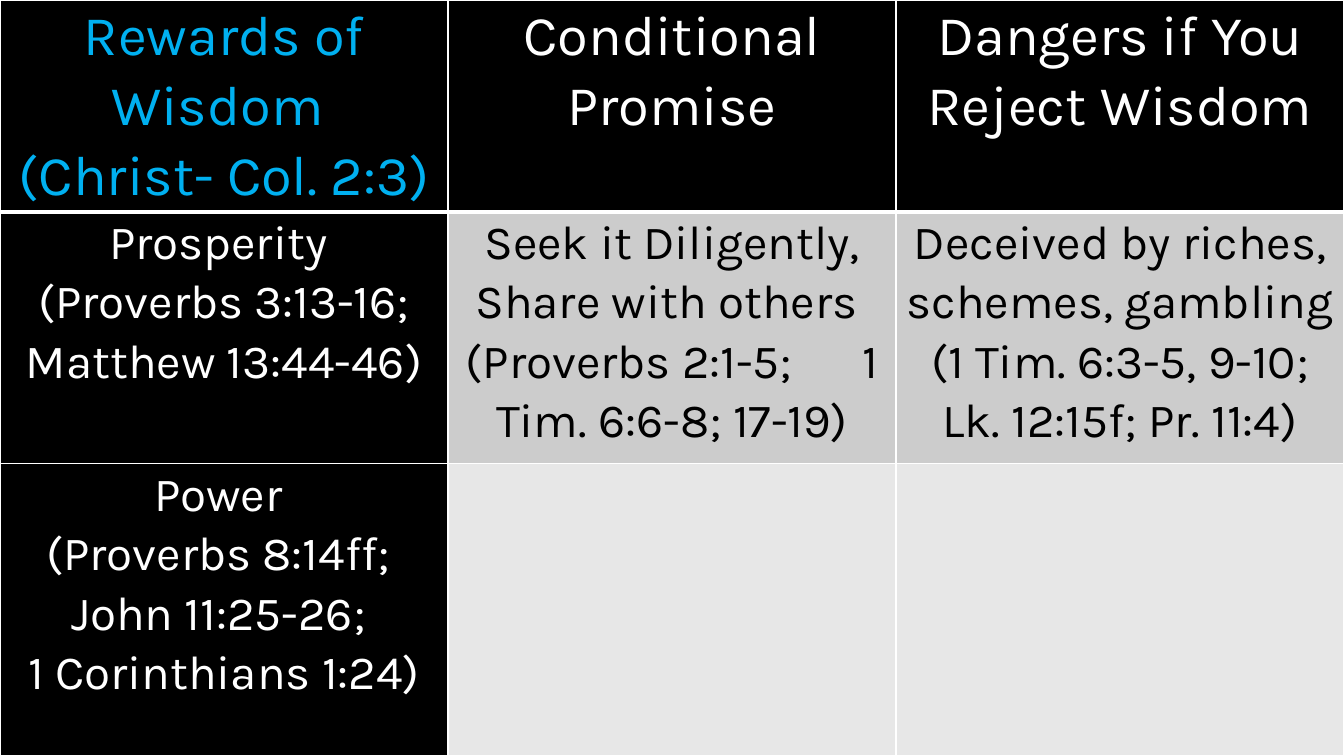
from lxml import etree
from pptx import Presentation
from pptx.dml.color import RGBColor
from pptx.enum import text
from pptx.oxml import ns
from pptx.util import Inches, Pt

BLACK = RGBColor(0x00, 0x00, 0x00)
WHITE = RGBColor(0xFF, 0xFF, 0xFF)
BLUE = RGBColor(0x00, 0xB0, 0xF0)
GREY = RGBColor(0xCC, 0xCC, 0xCC)
PALE = RGBColor(0xE7, 0xE7, 0xE7)

WIDTH, HEIGHT = Inches(13.33), Inches(7.5)
ROW_HEIGHTS = [2.1, 2.5, 2.9]
ROW_FILLS = [BLACK, GREY, PALE]
HEADER_SIZE, BODY_SIZE = 40, 34
WIDE_GAP = 42

# Each cell is a list of paragraphs; a tab marks a wide gap within a line.
CELLS = [
    [["Rewards of Wisdom ", "(Christ- Col. 2:3)"],
     ["Conditional Promise"],
     ["Dangers if You Reject Wisdom"]],
    [["Prosperity ", "(Proverbs 3:13-16; Matthew 13:44-46)"],
     ["Seek it Diligently, Share with others ",
      "(Proverbs 2:1-5;\t1 Tim. 6:6-8; 17-19)"],
     ["Deceived by riches, schemes, gambling ",
      "(1 Tim. 6:3-5, 9-10; Lk. 12:15f; Pr. 11:4)"]],
    [["Power ", "(Proverbs 8:14ff; ", "John 11:25-26; ", "1 Corinthians 1:24)"],
     [], []],
]


def add_span(para, words, *, font, size, color, spacing=0):
    span = para.add_run()
    span.text = words
    span.font.name = font
    span.font.size = Pt(size)
    span.font.color.rgb = color
    if spacing:
        span.font._element.set("spc", str(spacing * 100))


class SlideBuilder:
    def __init__(self, deck, font):
        self.font = font
        self.page = deck.slides.add_slide(deck.slide_layouts[6])

    def background(self, color):
        fill = self.page.background.fill
        fill.solid()
        fill.fore_color.rgb = color

    def table(self, row_count, column_count):
        table = self.page.shapes.add_table(
            row_count, column_count, 0, 0, WIDTH, HEIGHT).table
        table.horz_banding = False
        for row, height in zip(table.rows, ROW_HEIGHTS):
            row.height = Inches(height)
        return table

    def cell(self, cell, paragraphs, *, fill, size, color, top=1, bottom=1):
        cell.margin_left = cell.margin_right = Inches(0.07)
        cell.margin_top = cell.margin_bottom = 0
        self.borders(cell, L=1, R=1, T=top, B=bottom)
        cell.fill.solid()
        cell.fill.fore_color.rgb = fill
        frame = cell.text_frame
        for index, words in enumerate(paragraphs):
            para = frame.add_paragraph() if index else frame.paragraphs[0]
            para.alignment = text.PP_ALIGN.CENTER
            para.line_spacing = 1.07
            style = {"font": self.font, "size": size, "color": color}
            for position, part in enumerate(words.split("\t")):
                if position:
                    add_span(para, " ", spacing=WIDE_GAP, **style)
                add_span(para, part, **style)

    def borders(self, cell, **widths):
        """Draw white borders; widths in points are keyed by side letter."""
        properties = cell._tc.get_or_add_tcPr()
        for side, width in widths.items():
            line = etree.SubElement(properties, ns.qn(f"a:ln{side}"), w=str(Pt(width)))
            solid = etree.SubElement(line, ns.qn("a:solidFill"))
            etree.SubElement(solid, ns.qn("a:srgbClr"), val=str(WHITE))


def main():
    deck = Presentation()
    deck.slide_width, deck.slide_height = WIDTH, HEIGHT
    builder = SlideBuilder(deck, "Karla")
    builder.background(BLACK)
    table = builder.table(len(CELLS), len(CELLS[0]))
    for r, row in enumerate(CELLS):
        for c, paragraphs in enumerate(row):
            fill = BLACK if c == 0 else ROW_FILLS[r]
            color = WHITE if fill == BLACK else BLACK
            builder.cell(
                table.cell(r, c), paragraphs, fill=fill,
                size=HEADER_SIZE if r == 0 else BODY_SIZE,
                color=BLUE if r == c == 0 else color,
                top=3 if r == 1 else 1, bottom=3 if r == 0 else 1)
    deck.save("out.pptx")


if __name__ == "__main__":
    main()
